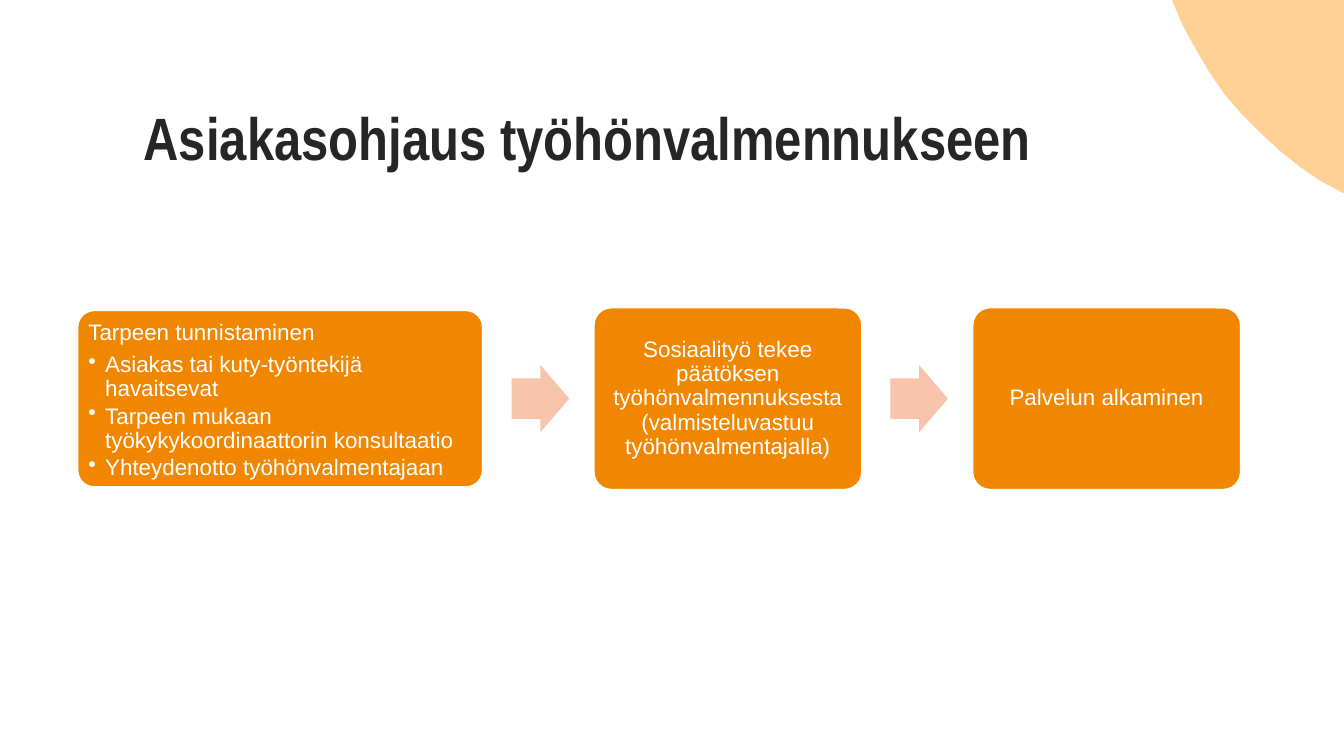
from lxml import etree
from pptx import Presentation
from pptx.dml.color import RGBColor
from pptx.enum.shapes import MSO_SHAPE
from pptx.enum.text import MSO_ANCHOR, PP_ALIGN
from pptx.oxml import ns
from pptx.util import Pt

COLORS = {"curve": "FFD093", "title": "262626", "step": "F18700", "arrow": "F7C3AB", "white": "FFFFFF"}


def paint(shape, fill, line=None):
    shape.shadow.inherit = False
    shape.fill.solid()
    shape.fill.fore_color.rgb = RGBColor.from_string(COLORS[fill])
    if line:
        shape.line.color.rgb = RGBColor.from_string(COLORS[line])
        shape.line.width = Pt(2)
    else:
        shape.line.fill.background()


def write(para, content, size=12, font="Arial", color="white", bold=False,
          align=PP_ALIGN.LEFT, spacing=0.9, after=0, bullet=False):
    para.alignment = align
    para.line_spacing = spacing
    para.space_after = Pt(after)
    if bullet:
        props = para._p.get_or_add_pPr()
        props.set("marL", str(Pt(9)))
        props.set("indent", str(Pt(-9)))
        etree.SubElement(props, ns.qn("a:buChar")).set("char", "•")
    span = para.add_run()
    span.text = content
    span.font.size = Pt(size)
    span.font.name = font
    span.font.bold = bold
    span.font.color.rgb = RGBColor.from_string(COLORS[color])


deck = Presentation()
deck.slide_width, deck.slide_height = Pt(720), Pt(405)
page = deck.slides.add_slide(deck.slide_layouts[6])

curve = [(627.8, 0), (633.6, 13.7), (640.8, 26.6), (648, 38.9), (655.9, 50.4), (665.3, 61.2),
         (675.4, 71.3), (685.4, 80.6), (696.2, 89.3), (707.8, 97.2), (720, 103.7), (720, 0)]
points = [(Pt(x), Pt(y)) for x, y in curve]
outline = page.shapes.build_freeform(*points[0])
outline.add_line_segments(points[1:], close=True)
paint(outline.convert_to_shape(), "curve")

title = page.shapes.add_textbox(Pt(33.8), Pt(18.7), Pt(609.1), Pt(77)).text_frame
title.word_wrap = True
title.vertical_anchor = MSO_ANCHOR.BOTTOM
title.margin_left = Pt(43.2)
write(title.paragraphs[0], "Asiakasohjaus työhönvalmennukseen", size=32, font="Arial Narrow",
      color="title", bold=True, spacing=1)

steps = [
    (41, 218.2, 95.8, ["Tarpeen tunnistaminen",
                       "Asiakas tai kuty-työntekijä havaitsevat",
                       "Tarpeen mukaan työkykykoordinaattorin konsultaatio",
                       "Yhteydenotto työhönvalmentajaan"]),
    (317.6, 144.7, 98.6, ["Sosiaalityö tekee päätöksen työhönvalmennuksesta "
                          "(valmisteluvastuu työhönvalmentajalla)"]),
    (520.5, 144.7, 98.6, ["Palvelun alkaminen"]),
]
middle = 213.6

for number, (left, width, height, lines) in enumerate(steps):
    if number:
        arrow = page.shapes.add_shape(MSO_SHAPE.RIGHT_ARROW, Pt(left - 43.5), Pt(middle - 18), Pt(30.8), Pt(36))
        arrow.adjustments[0] = 0.6
        arrow.adjustments[1] = 0.5
        paint(arrow, "arrow")
    box = page.shapes.add_shape(MSO_SHAPE.ROUNDED_RECTANGLE, Pt(left), Pt(middle - height / 2), Pt(width), Pt(height))
    box.adjustments[0] = 0.1
    paint(box, "step", line="white")
    frame = box.text_frame
    frame.word_wrap = True
    frame.margin_left = frame.margin_right = frame.margin_top = frame.margin_bottom = Pt(3.6)
    listed = len(lines) > 1
    frame.vertical_anchor = MSO_ANCHOR.TOP if listed else MSO_ANCHOR.MIDDLE
    for index, line in enumerate(lines):
        para = frame.add_paragraph() if index else frame.paragraphs[0]
        write(para, line, align=PP_ALIGN.LEFT if listed else PP_ALIGN.CENTER,
              after=1.8 if index else 4.2, bullet=index > 0)

deck.save("out.pptx")
